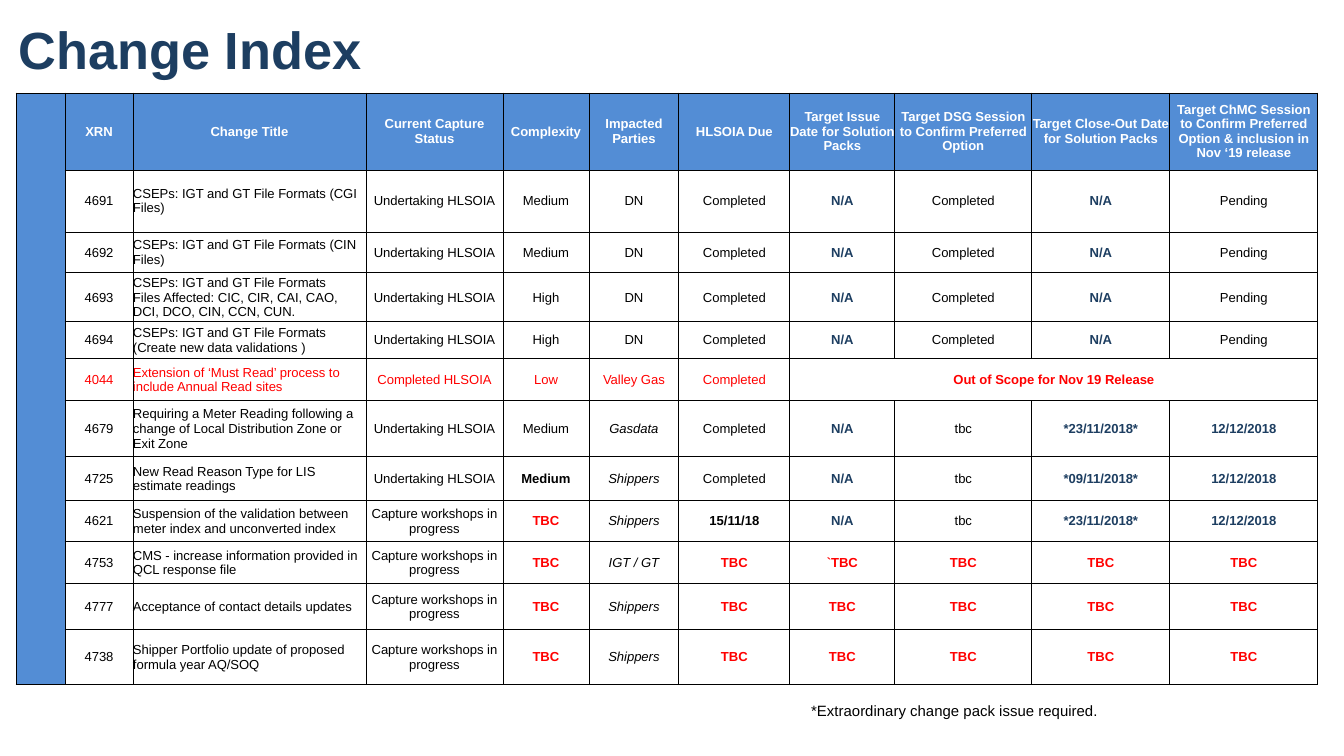
from lxml import etree
from pptx import Presentation
from pptx import util as u
from pptx.dml.color import RGBColor
from pptx.enum import text
from pptx.oxml.ns import qn

PX = 914400 / 134.4
NAVY = RGBColor(0x1D, 0x3E, 0x61)
BLUE = RGBColor(0x53, 0x8D, 0xD5)
RED = RGBColor(0xFF, 0x00, 0x00)
BLACK = RGBColor(0x00, 0x00, 0x00)
WHITE = RGBColor(0xFF, 0xFF, 0xFF)

COLUMNS = [49, 68, 233, 137, 86, 90, 111, 105, 137, 138, 148]
ROWS = [77, 62, 41, 49, 37, 42, 56, 44, 41, 42, 46, 55]
HEADERS = [
    "XRN", "Change Title", "Current Capture Status", "Complexity",
    "Impacted Parties", "HLSOIA Due", "Target Issue Date for Solution Packs",
    "Target DSG Session to Confirm Preferred Option",
    "Target Close-Out Date for Solution Packs",
    "Target ChMC Session to Confirm Preferred Option & inclusion in Nov ‘19 release",
]
UNDERTAKING = "Undertaking HLSOIA"
WORKSHOPS = "Capture workshops in progress"
PENDING = ["Completed", "N/A", "Completed", "N/A", "Pending"]
UNKNOWN = ["TBC"] * 5
OUT_OF_SCOPE = "4044"
EMPHASISED = {("4725", "Medium"), ("4621", "15/11/18")}
CHANGES = [
    ["4691", "CSEPs: IGT and GT File Formats (CGI Files)",
     UNDERTAKING, "Medium", "DN", *PENDING],
    ["4692", "CSEPs: IGT and GT File Formats (CIN Files)",
     UNDERTAKING, "Medium", "DN", *PENDING],
    ["4693", "CSEPs: IGT and GT File Formats\vFiles Affected: CIC, CIR, CAI, "
     "CAO, DCI, DCO, CIN, CCN, CUN.", UNDERTAKING, "High", "DN", *PENDING],
    ["4694", "CSEPs: IGT and GT File Formats (Create new data validations )",
     UNDERTAKING, "High", "DN", *PENDING],
    [OUT_OF_SCOPE, "Extension of ‘Must Read’ process to include Annual Read sites",
     "Completed HLSOIA", "Low", "Valley Gas", "Completed",
     "Out of Scope for Nov 19 Release"],
    ["4679", "Requiring a Meter Reading following a change of Local Distribution "
     "Zone or Exit Zone", UNDERTAKING, "Medium", "Gasdata",
     "Completed", "N/A", "tbc", "*23/11/2018*", "12/12/2018"],
    ["4725", "New Read Reason Type for LIS estimate readings",
     UNDERTAKING, "Medium", "Shippers",
     "Completed", "N/A", "tbc", "*09/11/2018*", "12/12/2018"],
    ["4621", "Suspension of the validation between meter index and unconverted index",
     WORKSHOPS, "TBC", "Shippers",
     "15/11/18", "N/A", "tbc", "*23/11/2018*", "12/12/2018"],
    ["4753", "CMS - increase information provided in QCL response file",
     WORKSHOPS, "TBC", "IGT / GT", "TBC", "`TBC", "TBC", "TBC", "TBC"],
    ["4777", "Acceptance of contact details updates",
     WORKSHOPS, "TBC", "Shippers", *UNKNOWN],
    ["4738", "Shipper Portfolio update of proposed formula year AQ/SOQ",
     WORKSHOPS, "TBC", "Shippers", *UNKNOWN],
]


def px(n):
    """Convert whole pixels to EMU."""
    return u.Emu(round(n * PX))


def change_style(xrn, col, value):
    """Return the run style that a value of a change takes."""
    if xrn == OUT_OF_SCOPE:
        return dict(color=RED, bold=col == 7)
    if "TBC" in value:
        return dict(color=RED, bold=True)
    if value == "N/A" or "/2018" in value:
        return dict(color=NAVY, bold=True)
    return dict(bold=(xrn, value) in EMPHASISED, italic=col == 5 and value != "DN")


class Deck:
    """Holds the style and the current slide."""

    font = "Arial"

    def __init__(self, width, height):
        self.prs = Presentation()
        self.prs.slide_width, self.prs.slide_height = px(width), px(height)

    def add_slide(self):
        self.s = self.prs.slides.add_slide(self.prs.slide_layouts[5])

    def set_text(self, tf, words, size, color=BLACK, bold=False, italic=False,
                 align=text.PP_ALIGN.LEFT):
        tf.text = words
        tf.word_wrap = True
        for p in tf.paragraphs:
            p.alignment = align
            for r in p.runs:
                r.font.name, r.font.size = self.font, u.Pt(size)
                r.font.bold, r.font.italic = bold, italic
                r.font.color.rgb = color

    def title(self, words, x, y, w, h):
        sp = self.s.shapes.title
        sp.left, sp.top, sp.width, sp.height = map(px, (x, y, w, h))
        tf = sp.text_frame
        tf.margin_left = tf.margin_right = tf.margin_top = tf.margin_bottom = 0
        tf.vertical_anchor = text.MSO_ANCHOR.MIDDLE
        self.set_text(tf, words, 28, NAVY, bold=True)

    def label(self, words, x, y, w, h):
        sp = self.s.shapes.add_textbox(*map(px, (x, y, w, h)))
        self.set_text(sp.text_frame, words, 8)

    def table(self, x, y, columns, rows):
        size = map(px, (x, y, sum(columns), sum(rows)))
        table = self.s.shapes.add_table(len(rows), len(columns), *size).table
        table.horz_banding = table.first_row = False
        for column, w in zip(table.columns, columns):
            column.width = px(w)
        for row, h in zip(table.rows, rows):
            row.height = px(h)
        for cell in table.iter_cells():
            self.frame(cell)
        return table

    def frame(self, cell):
        cell.margin_left = cell.margin_right = cell.margin_top = cell.margin_bottom = 0
        cell.vertical_anchor = text.MSO_ANCHOR.MIDDLE
        pr = cell._tc.get_or_add_tcPr()
        for side in "LRTB":
            ln = etree.SubElement(pr, qn("a:ln" + side), w=str(u.Pt(0.5)))
            fill = etree.SubElement(ln, qn("a:solidFill"))
            etree.SubElement(fill, qn("a:srgbClr"), val=str(BLACK))
        cell.fill.background()

    def paint(self, cell, color):
        cell.fill.solid()
        cell.fill.fore_color.rgb = color


def main():
    deck = Deck(1344, 756)
    deck.add_slide()
    deck.title("Change Index", 19, 19, 1277, 60)

    table = deck.table(16, 93, COLUMNS, ROWS)
    table.cell(0, 0).merge(table.cell(len(CHANGES), 0))
    deck.paint(table.cell(0, 0), BLUE)
    for col, words in enumerate(HEADERS, 1):
        cell = table.cell(0, col)
        deck.paint(cell, BLUE)
        deck.set_text(cell.text_frame, words, 7, WHITE, bold=True,
                      align=text.PP_ALIGN.CENTER)
    for row, change in enumerate(CHANGES, 1):
        if change[0] == OUT_OF_SCOPE:
            table.cell(row, 7).merge(table.cell(row, 10))
        for col, value in enumerate(change, 1):
            align = text.PP_ALIGN.LEFT if col == 2 else text.PP_ALIGN.CENTER
            deck.set_text(table.cell(row, col).text_frame, value, 7, align=align,
                          **change_style(change[0], col, value))

    deck.label("*Extraordinary change pack issue required.", 798, 695, 519, 32)
    deck.prs.save("out.pptx")


if __name__ == "__main__":
    main()
